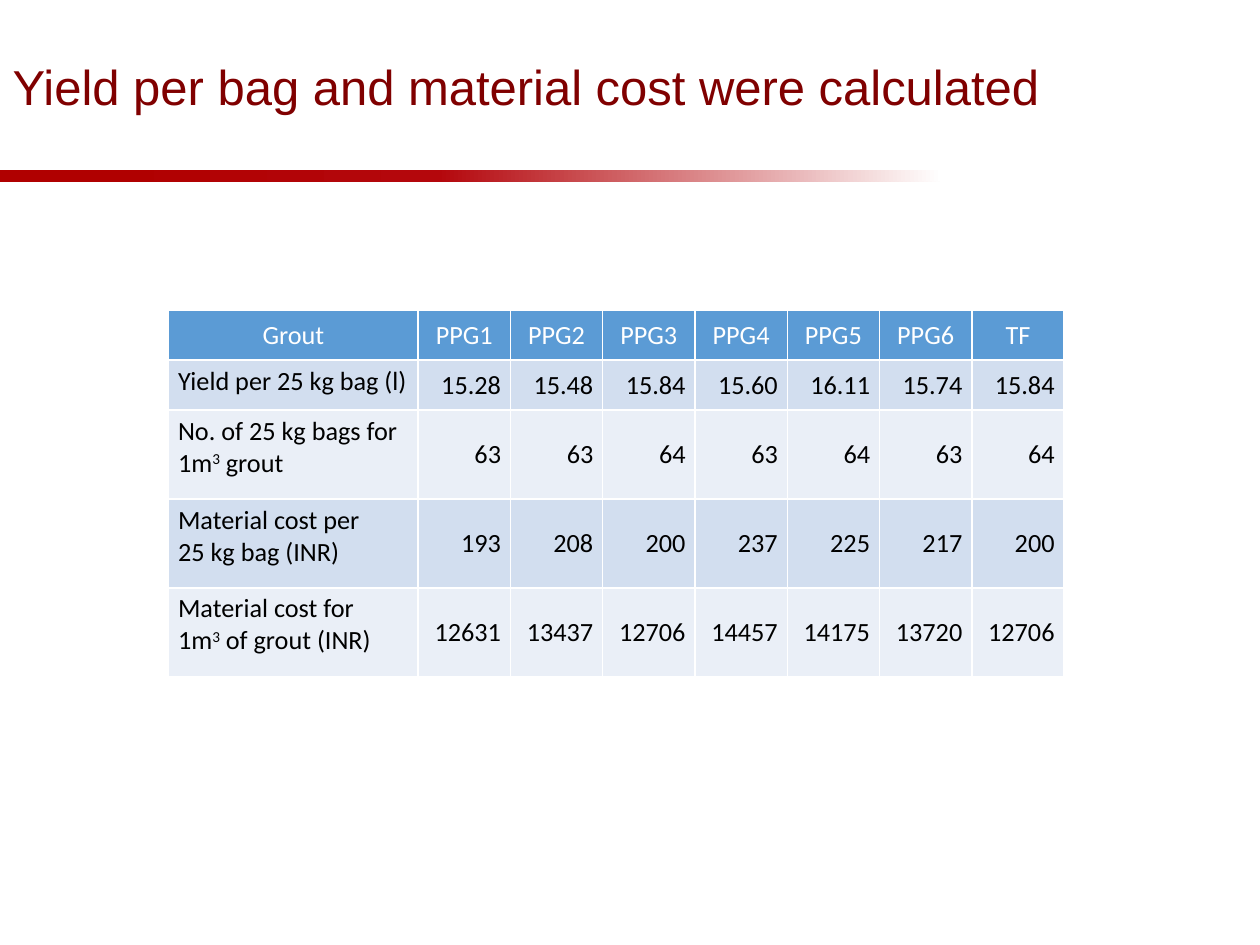
"""Build a slide with a table of grout yield per bag and material cost."""
from lxml import etree
from pptx import Presentation
from pptx import util as u
from pptx.dml.color import RGBColor
from pptx.enum import shapes, text
from pptx.oxml import parse_xml
from pptx.oxml.ns import nsdecls, qn

THEME = {
    "title": {"name": "Arial", "size": u.Pt(28), "color": "800000", "bold": False},
    "header": {"name": "Calibri", "size": u.Pt(15), "color": "FFFFFF", "bold": False},
    "body": {"name": "Calibri", "size": u.Pt(15), "color": "000000", "bold": False},
    "header_fill": "5B9BD5",
    "bands": ("D2DEEF", "EAEFF7"),
    "border": "FFFFFF",
    "bar_stops": ((0, "B00000"), (8, "B00000"), (35, "B4070C"), (75, "FFFFFF"), (100, "FFFFFF")),
}
HEADER = ["Grout", "PPG1", "PPG2", "PPG3", "PPG4", "PPG5", "PPG6", "TF"]
ROWS = [
    ["Yield per 25 kg bag (l)", "15.28", "15.48", "15.84", "15.60", "16.11", "15.74", "15.84"],
    ["No. of 25 kg bags for 1m^3^ grout", "63", "63", "64", "63", "64", "63", "64"],
    ["Material cost per\n25 kg bag (INR)", "193", "208", "200", "237", "225", "217", "200"],
    ["Material cost for\n1m^3^ of grout (INR)", "12631", "13437", "12706", "14457", "14175", "13720", "12706"],
]
ROW_HEIGHTS = [1.01, 1.01, 1.79, 1.79, 1.79]
COLUMN_WIDTHS = [5.03] + [1.86] * 7


def write_text(frame, content, style, alignment):
    """Write lines as paragraphs, raising parts between carets."""
    for index, line in enumerate(content.split("\n")):
        paragraph = frame.paragraphs[0] if index == 0 else frame.add_paragraph()
        paragraph.alignment = alignment
        for part_index, part in enumerate(line.split("^")):
            run = paragraph.add_run()
            run.text = part
            for name, value in style.items():
                if name == "color":
                    run.font.color.rgb = RGBColor.from_string(value)
                else:
                    setattr(run.font, name, value)
            if part_index % 2:
                run.font._element.set("baseline", "30000")


def add_borders(cell):
    """Draw a one-point line on every side of a cell."""
    properties = cell._tc.get_or_add_tcPr()
    for side in ("lnL", "lnR", "lnT", "lnB"):
        line = etree.SubElement(properties, qn(f"a:{side}"), w=str(u.Pt(1)))
        fill = etree.SubElement(line, qn("a:solidFill"))
        etree.SubElement(fill, qn("a:srgbClr"), val=THEME["border"])


presentation = Presentation()
presentation.slide_width, presentation.slide_height = u.Cm(25.4), u.Cm(19.05)
slide = presentation.slides.add_slide(presentation.slide_layouts[5])

title = slide.shapes.title
title_format = {"left": 0, "top": u.Cm(-0.03), "width": u.Cm(21.9), "height": u.Cm(3.68)}
for name, value in title_format.items():
    setattr(title, name, value)
title.text_frame.vertical_anchor = text.MSO_ANCHOR.MIDDLE
write_text(title.text_frame, "Yield per bag and material cost were calculated",
           THEME["title"], text.PP_ALIGN.LEFT)
title.text_frame.paragraphs[0].line_spacing = 0.9

stops = "".join(f'<a:gs pos="{position * 1000}"><a:srgbClr val="{color}"/></a:gs>'
                for position, color in THEME["bar_stops"])
for left, width, height in ((0, 25.37, 0.25), (-0.08, 25.43, 0.23)):
    bar = slide.shapes.add_shape(shapes.MSO_SHAPE.RECTANGLE, u.Cm(left), u.Cm(3.43),
                                 u.Cm(width), u.Cm(height))
    bar.shadow.inherit = False
    bar.line.fill.background()
    gradient = parse_xml(f'<a:gradFill {nsdecls("a")} rotWithShape="1"><a:gsLst>{stops}</a:gsLst>'
                         '<a:lin ang="0" scaled="0"/></a:gradFill>')
    bar._element.spPr.find(qn("a:prstGeom")).addnext(gradient)

table = slide.shapes.add_table(len(ROW_HEIGHTS), len(COLUMN_WIDTHS), u.Cm(3.4), u.Cm(6.25),
                               u.Cm(sum(COLUMN_WIDTHS)), u.Cm(sum(ROW_HEIGHTS))).table
for column, width in zip(table.columns, COLUMN_WIDTHS):
    column.width = u.Cm(width)
for row, height in zip(table.rows, ROW_HEIGHTS):
    row.height = u.Cm(height)

for row_index, values in enumerate([HEADER] + ROWS):
    is_header = row_index == 0
    fill_color = THEME["header_fill"] if is_header else THEME["bands"][(row_index - 1) % 2]
    style = THEME["header" if is_header else "body"]
    for column_index, value in enumerate(values):
        is_label = column_index == 0 and not is_header
        alignment = text.PP_ALIGN.LEFT if is_label else text.PP_ALIGN.RIGHT
        cell = table.cell(row_index, column_index)
        cell_format = {
            "margin_left": u.Cm(0.19), "margin_right": u.Cm(0.19),
            "margin_top": u.Cm(0.1), "margin_bottom": u.Cm(0.1),
            "vertical_anchor": text.MSO_ANCHOR.TOP if is_label else text.MSO_ANCHOR.MIDDLE,
        }
        for name, setting in cell_format.items():
            setattr(cell, name, setting)
        add_borders(cell)
        cell.fill.solid()
        cell.fill.fore_color.rgb = RGBColor.from_string(fill_color)
        write_text(cell.text_frame, value, style, text.PP_ALIGN.CENTER if is_header else alignment)

presentation.save("out.pptx")
